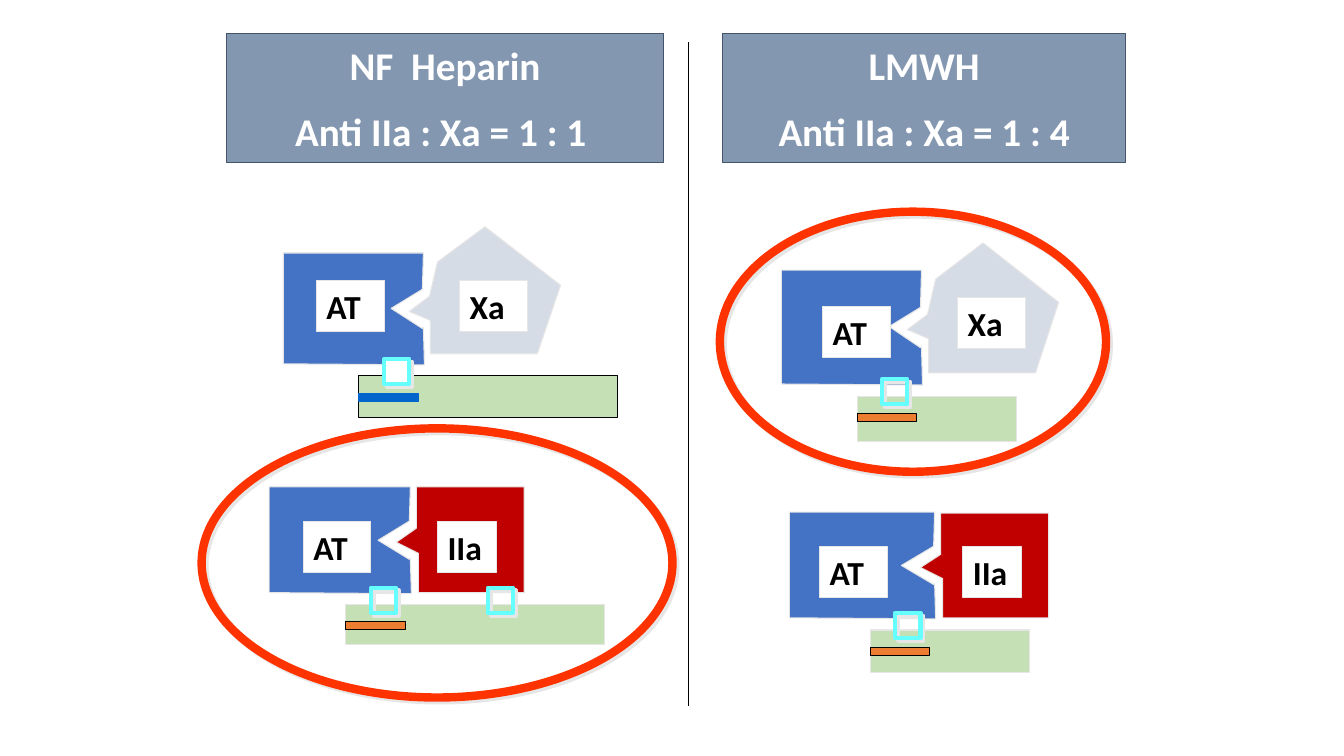
from lxml import etree
from pptx import Presentation
from pptx.dml.color import RGBColor
from pptx.enum.shapes import MSO_CONNECTOR, MSO_SHAPE
from pptx.enum.text import MSO_ANCHOR, PP_ALIGN
from pptx.oxml.ns import qn
from pptx.util import Pt

RECT, OVAL = MSO_SHAPE.RECTANGLE, MSO_SHAPE.OVAL
STRAIGHT = MSO_CONNECTOR.STRAIGHT
CENTER, LEFT = PP_ALIGN.CENTER, PP_ALIGN.LEFT
MIDDLE = MSO_ANCHOR.MIDDLE
PX = 9144
FONT = "Calibri"

COLORS = {
    "black": "000000", "white": "FFFFFF", "edge": "E7E6E6",
    "header": "8497B0", "header edge": "44546A", "ring": "FF3300",
    "AT": "4472C4", "Xa": "D6DCE5", "IIa": "C00000",
    "heparin": "C5E0B4", "orange": "ED7D31", "blue": "0066CC",
    "site": "66FFFF",
}

DIVIDER = (683, 42, 683, 700)
RINGS = [(200, 425, 467, 267), (714, 210, 383, 258)]
HEADERS = [
    ((225, 33, 433, 128), ["NF  Heparin", "Anti IIa : Xa = 1 : 1 "]),
    ((717, 33, 399, 128), ["LMWH", "Anti IIa : Xa = 1 : 4"]),
]

OUTLINES = {
    "AT": ((140, 111), [(0, 0), (0, 110), (140, 111), (139, 74), (138, 75),
                        (107, 55), (138, 36), (139, 0)]),
    "Xa": ((150, 126), [(75, 0), (150, 58), (127, 126), (21, 126), (21, 93),
                        (0, 84), (20, 69), (28, 35)]),
    "IIa": ((127, 105), [(74, 0), (127, 0), (127, 105), (22, 105), (22, 66),
                         (0, 55), (20, 41), (20, 0)]),
}
LABEL_SIZES = {"AT": (67, 51), "Xa": (67, 51), "IIa": (58, 51)}
SITE_SIZE, SITE_RISE = 25, 17
PENTA_DROP, PENTA_SIZE = 17, (59, 8)

COMPLEXES = [
    {"enzyme": "IIa", "enzyme box": (393, 483, 127, 105), "enzyme label": (434, 517),
     "AT box": (267, 483, 141, 106), "AT label": (301, 517),
     "heparin": (343, 600, 257, 39), "site offsets": [25, 141]},
    {"enzyme": "IIa", "enzyme box": (913, 509, 127, 104), "enzyme label": (955, 542),
     "AT box": (783, 508, 145, 106), "AT label": (813, 542),
     "heparin": (863, 625, 158, 42), "site offsets": [25]},
    {"enzyme": "Xa", "enzyme box": (406, 225, 150, 126), "enzyme label": (456, 278),
     "AT box": (281, 251, 140, 111), "AT label": (314, 278),
     "heparin": (356, 373, 257, 41), "site offsets": [25],
     "heparin edge": "black", "penta": ("blue", "blue"), "site fill": "white"},
    {"enzyme": "Xa", "enzyme box": (900, 241, 150, 129), "enzyme label": (950, 295),
     "AT box": (775, 268, 140, 114), "AT label": (816, 304),
     "heparin": (850, 393, 158, 45), "site offsets": [25]},
]


def rgb(name):
    return RGBColor.from_string(COLORS[name])


def emu(lengths):
    return [length * PX for length in lengths]


def paint(shape, fill, edge, weight=0.75):
    if fill:
        shape.fill.solid()
        shape.fill.fore_color.rgb = rgb(fill)
    else:
        shape.fill.background()
    shape.line.color.rgb = rgb(edge)
    shape.line.width = Pt(weight)


def add_block(shapes, kind, box, fill, edge, weight=0.75, shadow=False):
    block = shapes.add_shape(kind, *emu(box))
    paint(block, fill, edge, weight)
    block.shadow.inherit = False
    if shadow:
        effects = block._element.spPr.find(qn("a:effectLst"))
        cast = etree.SubElement(effects, qn("a:outerShdw"), blurRad="0",
                                dist=str(Pt(2.8)), dir="2700000",
                                algn="ctr", rotWithShape="0")
        etree.SubElement(cast, qn("a:srgbClr"), val=COLORS["edge"])


def add_text(shapes, box, lines, size, color, fill, edge, align=LEFT):
    panel = shapes.add_textbox(*emu(box))
    paint(panel, fill, edge)
    frame = panel.text_frame
    frame.word_wrap = True
    frame.vertical_anchor = MIDDLE
    frame.text = "\n".join(lines)
    for index, paragraph in enumerate(frame.paragraphs):
        paragraph.alignment = align
        paragraph.space_before = Pt(size / 2 if index else 0)
        paragraph.font.name = FONT
        paragraph.font.size = Pt(size)
        paragraph.font.bold = True
        paragraph.font.color.rgb = rgb(color)


def add_protein(shapes, name, box):
    left, top, width, height = box
    (base_width, base_height), outline = OUTLINES[name]
    points = [(left + x * width / base_width, top + y * height / base_height)
              for x, y in outline]
    builder = shapes.build_freeform(*points[0], scale=PX)
    builder.add_line_segments(points[1:], close=True)
    protein = builder.convert_to_shape()
    paint(protein, name, "edge")
    protein.shadow.inherit = False


def add_label(shapes, name, corner):
    add_text(shapes, corner + LABEL_SIZES[name], [name], 24, "black", "white", "edge")


def add_complex(shapes, parts):
    enzyme = parts["enzyme"]
    left, top = parts["heparin"][:2]
    add_protein(shapes, enzyme, parts["enzyme box"])
    add_protein(shapes, "AT", parts["AT box"])
    add_block(shapes, RECT, parts["heparin"], "heparin", parts.get("heparin edge", "edge"))
    add_block(shapes, RECT, (left, top + PENTA_DROP) + PENTA_SIZE,
              *parts.get("penta", ("orange", "black")))
    add_label(shapes, enzyme, parts["enzyme label"])
    for offset in parts["site offsets"]:
        add_block(shapes, RECT, (left + offset, top - SITE_RISE, SITE_SIZE, SITE_SIZE),
                  parts.get("site fill"), "site", 3, shadow=True)
    add_label(shapes, "AT", parts["AT label"])


def main():
    deck = Presentation()
    deck.slide_width, deck.slide_height = emu((1333, 750))
    shapes = deck.slides.add_slide(deck.slide_layouts[6]).shapes

    divider = shapes.add_connector(STRAIGHT, *emu(DIVIDER))
    divider.line.color.rgb = rgb("black")
    divider.line.width = Pt(0.75)
    etree.SubElement(divider._element.spPr, qn("a:effectLst"))

    for ring in RINGS:
        add_block(shapes, OVAL, ring, None, "ring", 6, shadow=True)
    for box, lines in HEADERS:
        add_text(shapes, box, lines, 28, "white", "header", "header edge", CENTER)
    for parts in COMPLEXES:
        add_complex(shapes.add_group_shape().shapes, parts)

    deck.save("out.pptx")


if __name__ == "__main__":
    main()
